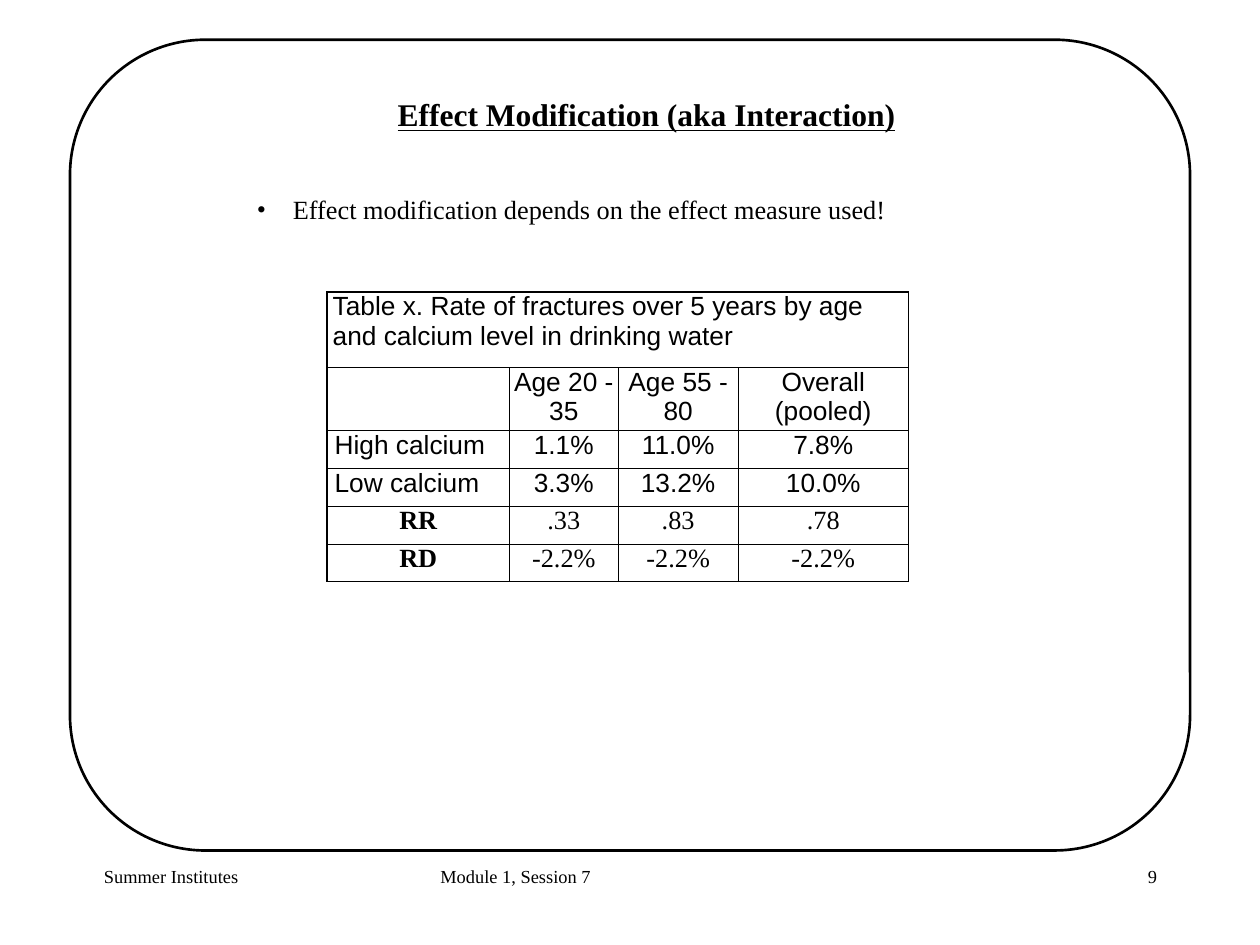
"""Builds the effect modification slide with its table of fracture rates."""
from dataclasses import dataclass

from lxml.etree import SubElement
from pptx import Presentation
from pptx.dml.color import RGBColor
from pptx.enum.shapes import MSO_SHAPE as Preset
from pptx.enum.text import PP_ALIGN as Align
from pptx.oxml.ns import qn
from pptx.util import Inches, Pt

SERIF, SANS = "Times New Roman", "Arial"
BLACK = "000000"


@dataclass(frozen=True)
class Style:
    size: float = 20
    font: str = SERIF
    bold: bool = False
    underline: bool = False
    align: Align = Align.LEFT


@dataclass(frozen=True)
class Label:
    text: str
    left: float
    top: float
    width: float
    height: float
    style: Style


@dataclass(frozen=True)
class Row:
    height: float
    texts: tuple[str, ...]
    head: Style
    body: Style
    indent: float = 0


def color(value: str) -> RGBColor:
    return RGBColor.from_string(value)


def write(paragraph, text: str, style: Style) -> None:
    paragraph.alignment = style.align
    run = paragraph.add_run()
    run.text = text
    run.font.size = Pt(style.size)
    run.font.name = style.font
    run.font.bold = style.bold
    run.font.underline = style.underline
    run.font.color.rgb = color(BLACK)


def add_label(slide, label: Label):
    box = slide.shapes.add_textbox(
        Inches(label.left), Inches(label.top), Inches(label.width), Inches(label.height))
    box.text_frame.word_wrap = True
    paragraph = box.text_frame.paragraphs[0]
    write(paragraph, label.text, label.style)
    return paragraph


def add_bullet(paragraph, indent: float) -> None:
    properties = paragraph._p.get_or_add_pPr()
    properties.set("marL", str(Inches(indent)))
    properties.set("indent", str(-Inches(indent)))
    SubElement(properties, qn("a:buFont"), typeface=SERIF)
    SubElement(properties, qn("a:buChar"), char="•")


def add_frame(slide) -> None:
    frame = slide.shapes.add_shape(
        Preset.ROUNDED_RECTANGLE, Inches(0.74), Inches(0.42), Inches(11.85), Inches(8.58))
    frame.adjustments[0] = 0.167
    frame.shadow.inherit = False
    frame.fill.background()
    frame.line.color.rgb = color(BLACK)
    frame.line.width = Pt(2)


def format_cell(cell, indent: float) -> None:
    cell.margin_left = Inches(indent)
    cell.margin_right = cell.margin_top = cell.margin_bottom = 0
    properties = cell._tc.get_or_add_tcPr()
    for side in ("lnL", "lnR", "lnT", "lnB"):
        border = SubElement(properties, qn(f"a:{side}"), w=str(Pt(1)))
        fill = SubElement(border, qn("a:solidFill"))
        SubElement(fill, qn("a:srgbClr"), val=BLACK)
    cell.fill.background()


def add_rates(slide, rows: list[Row], widths: list[float]) -> None:
    rates = slide.shapes.add_table(
        len(rows), len(widths), Inches(3.46), Inches(3.09),
        Inches(sum(widths)), Inches(sum(row.height for row in rows))).table
    rates.first_row = rates.horz_banding = False
    for column, width in zip(rates.columns, widths):
        column.width = Inches(width)
    for r, row in enumerate(rows):
        rates.rows[r].height = Inches(row.height)
        for c in range(len(widths)):
            format_cell(rates.cell(r, c), 0 if c else row.indent)
        for c, text in enumerate(row.texts):
            if text:
                paragraph = rates.cell(r, c).text_frame.paragraphs[0]
                write(paragraph, text, row.body if c else row.head)
    rates.cell(0, 0).merge(rates.cell(0, len(widths) - 1))


def main() -> None:
    deck = Presentation()
    deck.slide_width, deck.slide_height = Inches(13.33), Inches(10)
    slide = deck.slides.add_slide(deck.slide_layouts[6])
    add_frame(slide)

    footer = Style(14)
    page = Style(14, align=Align.RIGHT)
    for label in (
        Label("Summer Institutes", 1, 9.11, 2.78, 0.67, footer),
        Label("Module 1, Session 7", 4.56, 9.11, 4.22, 0.67, footer),
        Label("9", 9.56, 9.11, 2.78, 0.67, page),
    ):
        add_label(slide, label)

    caption = Style(font=SANS)
    rate = Style(font=SANS, align=Align.CENTER)
    measure = Style(bold=True, align=Align.CENTER)
    effect = Style(align=Align.CENTER)
    add_rates(slide, [
        Row(0.8, ("Table x. Rate of fractures over 5 years by age "
                  "and calcium level in drinking water",), caption, rate, 0.06),
        Row(0.62, ("", "Age 20 - 35", "Age 55 - 80", "Overall (pooled)"), rate, rate),
        Row(0.4, ("High calcium", "1.1%", "11.0%", "7.8%"), caption, rate, 0.08),
        Row(0.4, ("Low calcium", "3.3%", "13.2%", "10.0%"), caption, rate, 0.08),
        Row(0.4, ("RR", ".33", ".83", ".78"), measure, effect),
        Row(0.4, ("RD", "-2.2%", "-2.2%", "-2.2%"), measure, effect),
    ], [1.93, 1.15, 1.27, 1.8])

    title = Style(24, bold=True, underline=True, align=Align.CENTER)
    add_label(slide, Label("Effect Modification (aka Interaction)",
                           3.88, 0.96, 5.92, 0.5, title))
    message = add_label(slide, Label("Effect modification depends on the effect measure used!",
                                     2.62, 2, 8.08, 0.44, Style()))
    add_bullet(message, 0.38)
    deck.save("out.pptx")


if __name__ == "__main__":
    main()
